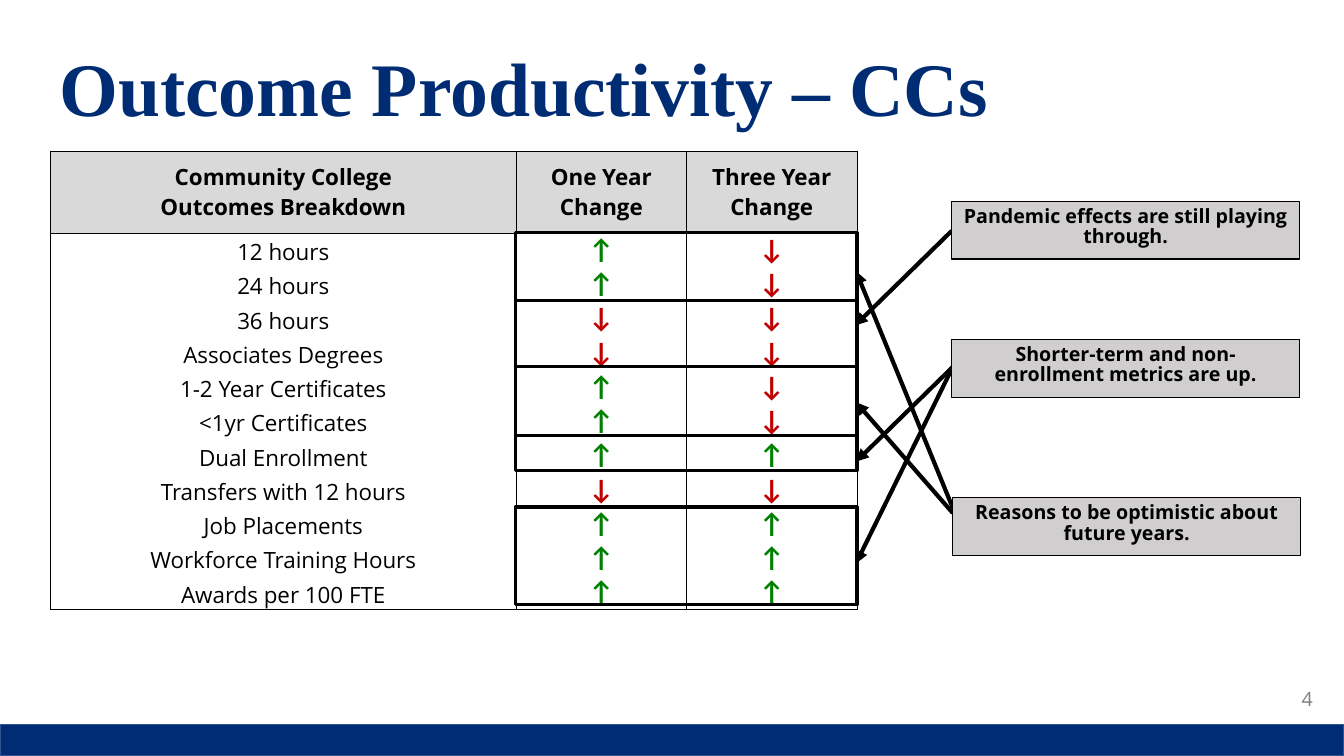
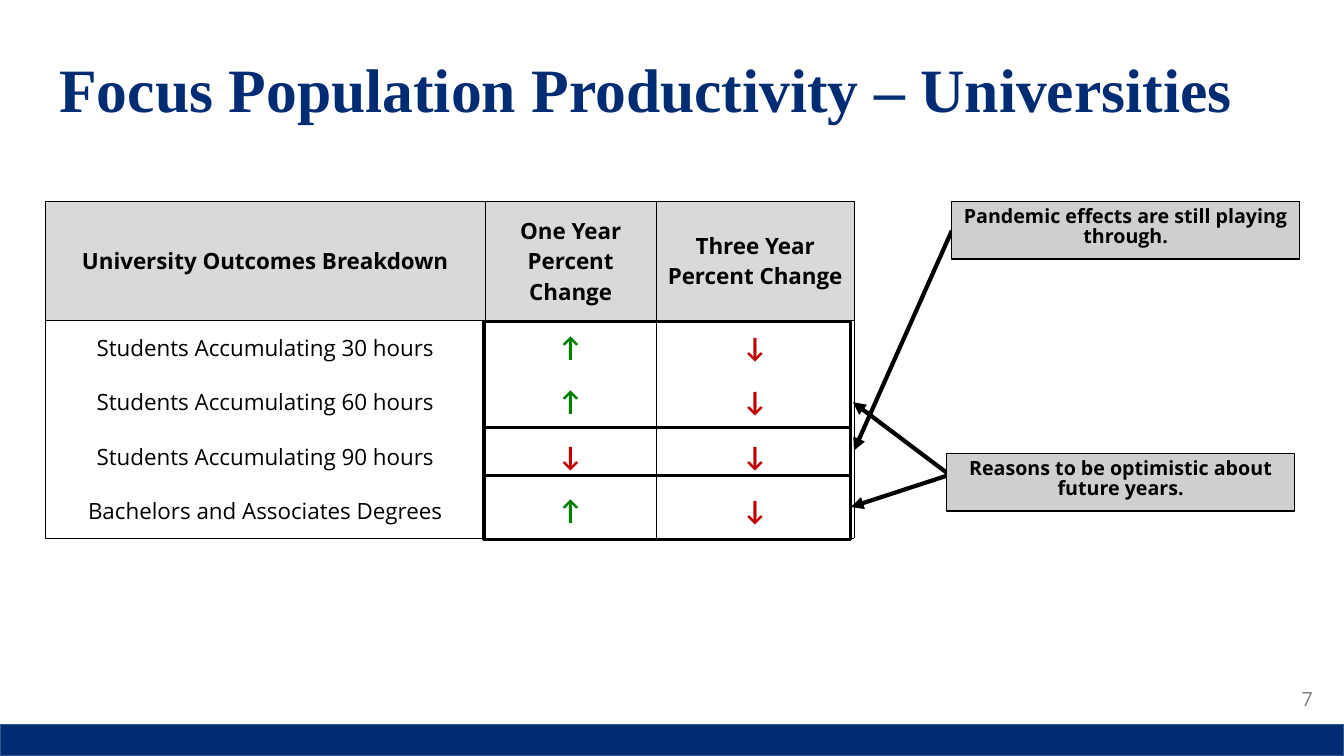
from lxml.etree import SubElement
from pptx import Presentation
from pptx.dml.color import RGBColor
from pptx.enum.shapes import MSO_CONNECTOR, MSO_SHAPE
from pptx.enum.text import MSO_ANCHOR, MSO_AUTO_SIZE, PP_ALIGN
from pptx.oxml.ns import qn
from pptx.util import Inches, Pt

NAVY = "002C73"
BAND_EDGE = "325491"
BLACK = "000000"
WHITE = "FFFFFF"
HEADER_GRAY = "D9D9D9"
NOTE_GRAY = "D0CECE"
NUMBER_GRAY = "7F7F82"
ARROW_COLORS = {"↑": "008000", "↓": "C00000"}
TITLE_FONT = "Times New Roman"
BODY_FONT = "Open Sans"
ARROW_FONT = "Calibri"
NOTE_WIDTH, NOTE_HEIGHT = 3.45, 0.57

PANDEMIC = "Pandemic effects are still playing through."
SHORT_TERM = "Shorter-term and non-enrollment metrics are up."
OPTIMISTIC = "Reasons to be optimistic about future years."


def rgb(color):
    return RGBColor.from_string(color)


def box(values):
    return [Inches(v) for v in values]


def add_text(p, text, size, color=BLACK, font=BODY_FONT, bold=False,
             align=PP_ALIGN.CENTER, spacing=None):
    p.alignment = align
    if spacing:
        p.line_spacing = spacing
    r = p.add_run()
    r.text = text
    r.font.size = Pt(size)
    r.font.name = font
    r.font.bold = bold
    r.font.color.rgb = rgb(color)


def add_rect(s, at, line, width, fill=None):
    sp = s.shapes.add_shape(MSO_SHAPE.RECTANGLE, *box(at))
    sp.shadow.inherit = False
    if fill:
        sp.fill.solid()
        sp.fill.fore_color.rgb = rgb(fill)
    else:
        sp.fill.background()
    sp.line.color.rgb = rgb(line)
    sp.line.width = Pt(width)
    return sp


def add_textbox(s, at, anchor, text, size, **style):
    tf = s.shapes.add_textbox(*box(at)).text_frame
    tf.word_wrap = True
    tf.vertical_anchor = anchor
    add_text(tf.paragraphs[0], text, size, **style)


def add_base(prs, title, title_size, number):
    s = prs.slides.add_slide(prs.slide_layouts[6])
    add_rect(s, (0, 7.19, 13.33, 0.31), BAND_EDGE, 1, NAVY)
    add_textbox(s, (0.49, 0.33, 12.34, 1.17), MSO_ANCHOR.MIDDLE, title, title_size,
                color=NAVY, font=TITLE_FONT, bold=True, align=PP_ALIGN.LEFT, spacing=0.9)
    add_textbox(s, (12.42, 6.77, 0.7, 0.4), MSO_ANCHOR.TOP, number, 14,
                color=NUMBER_GRAY, align=PP_ALIGN.RIGHT)
    return s


def set_borders(cell, widths):
    tc_pr = cell._tc.get_or_add_tcPr()
    for side, width in zip("LRTB", widths):
        ln = SubElement(tc_pr, qn(f"a:ln{side}"), w=str(Pt(width)))
        if width:
            fill = SubElement(ln, qn("a:solidFill"))
            SubElement(fill, qn("a:srgbClr"), val=BLACK)
        else:
            SubElement(ln, qn("a:noFill"))


def fill_cell(cell, text, header, anchor):
    cell.fill.solid()
    cell.fill.fore_color.rgb = rgb(HEADER_GRAY if header else WHITE)
    cell.vertical_anchor = anchor
    cell.margin_left = cell.margin_right = cell.margin_top = cell.margin_bottom = 0
    tf = cell.text_frame
    for i, line in enumerate(text.split("\n")):
        p = tf.add_paragraph() if i else tf.paragraphs[0]
        if line in ARROW_COLORS:
            add_text(p, line, 20, ARROW_COLORS[line], ARROW_FONT, True)
        else:
            add_text(p, line, 16, bold=header)


def add_outcomes(s, left, top, col_widths, header_height, row_height, headers, rows,
                 inner, anchor):
    data = [headers] + [(name, *arrows) for name, arrows in rows]
    heights = [header_height] + [row_height] * len(rows)
    table = s.shapes.add_table(len(data), len(headers),
                               *box((left, top, sum(col_widths), sum(heights)))).table
    for col, width in zip(table.columns, col_widths):
        col.width = Inches(width)
    last_row, last_col = len(rows), len(headers) - 1
    for i, values in enumerate(data):
        table.rows[i].height = Inches(heights[i])
        for j, text in enumerate(values):
            cell = table.cell(i, j)
            set_borders(cell, (
                0.5 if j == 0 else inner,
                0.5 if j == last_col else inner,
                {0: 0.5, 1: inner}.get(i, 0),
                {0: inner, last_row: 0.5}.get(i, 0),
            ))
            fill_cell(cell, text, i == 0, MSO_ANCHOR.MIDDLE if i == 0 else anchor)


def add_frames(s, left, width, spans):
    for top, bottom in spans:
        add_rect(s, (left, top, width, bottom - top), BLACK, 2.25)


def add_arrows(s, ends):
    for start, end in ends:
        cx = s.shapes.add_connector(MSO_CONNECTOR.STRAIGHT, *box(start + end))
        cx.line.color.rgb = rgb(BLACK)
        cx.line.width = Pt(3)
        SubElement(cx.line._get_or_add_ln(), qn("a:tailEnd"), type="triangle")
        SubElement(cx._element.spPr, qn("a:effectLst"))


def add_notes(s, notes):
    for left, top, text in notes:
        sp = add_rect(s, (left, top, NOTE_WIDTH, NOTE_HEIGHT), BLACK, 0.75, NOTE_GRAY)
        tf = sp.text_frame
        tf.word_wrap = True
        tf.auto_size = MSO_AUTO_SIZE.SHAPE_TO_FIT_TEXT
        tf.vertical_anchor = MSO_ANCHOR.TOP
        add_text(tf.paragraphs[0], text, 14, bold=True, spacing=0.88)


def add_college_slide(prs):
    s = add_base(prs, "Outcome Productivity – CCs", 54, "4")
    headers = ("Community College\nOutcomes Breakdown", "One Year\nChange",
               "Three Year\nChange")
    rows = [
        ("12 hours", "↑↓"),
        ("24 hours", "↑↓"),
        ("36 hours", "↓↓"),
        ("Associates Degrees", "↓↓"),
        ("1-2 Year Certificates", "↑↓"),
        ("<1yr Certificates", "↑↓"),
        ("Dual Enrollment", "↑↑"),
        ("Transfers with 12 hours", "↓↓"),
        ("Job Placements", "↑↑"),
        ("Workforce Training Hours", "↑↑"),
        ("Awards per 100 FTE", "↑↑"),
    ]
    add_outcomes(s, 0.5, 1.5, (4.62, 1.69, 1.69), 0.81, 0.34, headers, rows,
                 0.25, MSO_ANCHOR.BOTTOM)
    add_frames(s, 5.11, 3.39, [(2.31, 2.98), (2.98, 3.64), (3.64, 4.32),
                               (4.32, 4.67), (5.03, 6)])
    add_arrows(s, [
        ((9.44, 2.29), (8.48, 3.23)),
        ((9.45, 3.64), (8.49, 4.58)),
        ((9.45, 3.64), (8.49, 5.59)),
        ((9.45, 5.04), (8.49, 2.69)),
        ((9.45, 5.09), (8.49, 3.99)),
    ])
    add_notes(s, [(9.44, 2, PANDEMIC), (9.44, 3.37, SHORT_TERM), (9.45, 4.94, OPTIMISTIC)])


def add_university_slide(prs):
    s = add_base(prs, "Focus Population Productivity – Universities", 44, "7")
    headers = ("University Outcomes Breakdown", "One Year Percent Change",
               "Three Year Percent Change")
    rows = [
        ("Students Accumulating 30 hours", "↑↓"),
        ("Students Accumulating 60 hours", "↑↓"),
        ("Students Accumulating 90 hours", "↓↓"),
        ("Bachelors and Associates Degrees", "↑↓"),
    ]
    add_outcomes(s, 0.45, 2, (4.36, 1.7, 1.96), 1.18, 0.54, headers, rows,
                 0.5, MSO_ANCHOR.MIDDLE)
    add_frames(s, 4.8, 3.64, [(3.19, 4.24), (4.24, 4.72), (4.72, 5.35)])
    add_arrows(s, [
        ((9.44, 2.29), (8.47, 4.47)),
        ((9.39, 4.72), (8.44, 5.03)),
        ((9.39, 4.69), (8.46, 3.99)),
    ])
    add_notes(s, [(9.44, 2, PANDEMIC), (9.39, 4.5, OPTIMISTIC)])


def main():
    prs = Presentation()
    prs.slide_width, prs.slide_height = Inches(13.33), Inches(7.5)
    add_college_slide(prs)
    add_university_slide(prs)
    prs.save("out.pptx")


if __name__ == "__main__":
    main()
